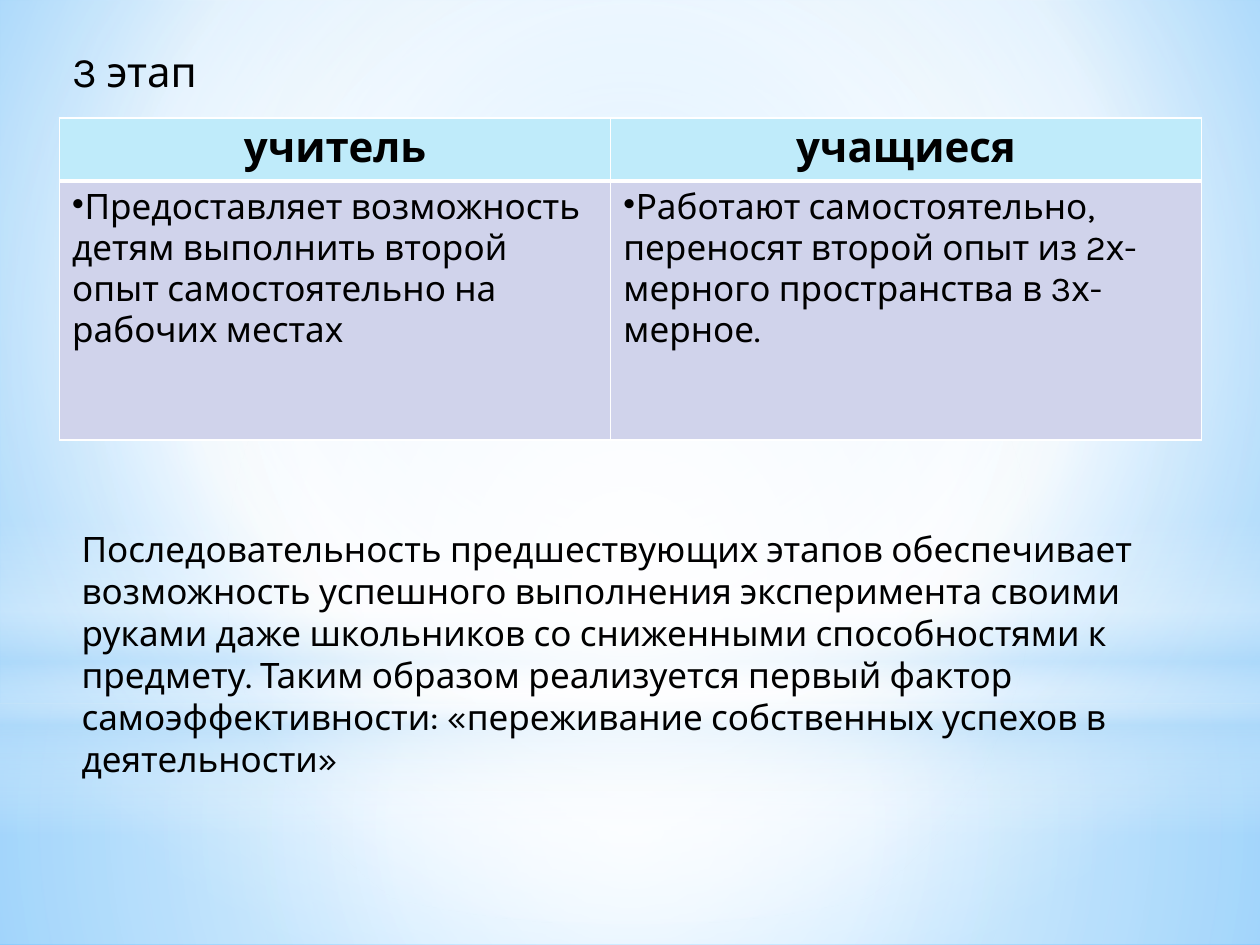
from lxml.etree import SubElement
from pptx import Presentation
from pptx.dml.color import RGBColor
from pptx.enum.shapes import MSO_SHAPE
from pptx.enum.text import MSO_ANCHOR, MSO_AUTO_SIZE, PP_ALIGN
from pptx.oxml import parse_xml
from pptx.oxml.ns import nsdecls, qn
from pptx.util import Pt

WIDTH, HEIGHT = 720, 540
CENTER = (50, 50, 50, 50)


def color(value):
    return RGBColor.from_string(value)


def gradient_xml(stops, focus=None, angle=0):
    """Radial gradient around the focus rectangle, or linear without one."""
    stop_xml = "".join(
        f'<a:gs pos="{position * 1000}"><a:srgbClr val="{value}">'
        f'<a:alpha val="{opacity * 1000}"/></a:srgbClr></a:gs>'
        for position, value, opacity in stops)
    if focus:
        sides = " ".join(f'{side}="{share * 1000}"' for side, share in zip("ltrb", focus))
        course = f'<a:path path="circle"><a:fillToRect {sides}/></a:path>'
    else:
        course = f'<a:lin ang="{angle * 60000}" scaled="0"/>'
    return parse_xml(f'<a:gradFill {nsdecls("a")} rotWithShape="1">'
                     f'<a:gsLst>{stop_xml}</a:gsLst>{course}</a:gradFill>')


class SlideBuilder:
    font = {"name": "Karla", "bold": False}
    text_color = "000000"
    border_color = "FFFFFF"

    def __init__(self, slide):
        self.slide = slide

    def apply_gradient(self, fill, properties_tag, owner, **gradient):
        fill.background()
        properties = next(owner.iter(qn(properties_tag)))
        properties.replace(properties.find(qn("a:noFill")), gradient_xml(**gradient))

    def background(self, **gradient):
        self.apply_gradient(self.slide.background.fill, "p:bgPr", self.slide.element, **gradient)

    def glow(self, kind, box, **gradient):
        shape = self.slide.shapes.add_shape(kind, *map(Pt, box))
        shape.shadow.inherit = False
        shape.line.fill.background()
        self.apply_gradient(shape.fill, "p:spPr", shape.element, **gradient)

    def fill_text(self, frame, text, size, align=PP_ALIGN.LEFT, **extra):
        paragraph = frame.paragraphs[0]
        paragraph.alignment = align
        run = paragraph.add_run()
        run.text = text
        for name, value in {**self.font, "size": Pt(size), **extra}.items():
            setattr(run.font, name, value)
        run.font.color.rgb = color(self.text_color)
        return paragraph

    def fit_frame(self, frame):
        settings = {"word_wrap": True, "vertical_anchor": MSO_ANCHOR.TOP,
                    "auto_size": MSO_AUTO_SIZE.SHAPE_TO_FIT_TEXT}
        for name, value in settings.items():
            setattr(frame, name, value)

    def title(self, text, box, size):
        shape = self.slide.shapes.title
        for name, value in zip(("left", "top", "width", "height"), box):
            setattr(shape, name, Pt(value))
        self.fit_frame(shape.text_frame)
        self.fill_text(shape.text_frame, text, size)
        shape.element.getparent().append(shape.element)  # in front of the glows

    def text(self, text, box, size):
        frame = self.slide.shapes.add_textbox(*map(Pt, box)).text_frame
        self.fit_frame(frame)
        self.fill_text(frame, text, size)

    def bullet(self, paragraph):
        properties = paragraph._p.get_or_add_pPr()
        properties.set("marL", "0")
        properties.set("indent", "0")
        SubElement(properties, qn("a:buChar"), char="•")

    def borders(self, cell, bottom):
        properties = cell._tc.get_or_add_tcPr()
        widths = {"lnL": 1, "lnR": 1, "lnT": 1, "lnB": bottom}
        for index, (tag, width) in enumerate(widths.items()):
            properties.insert(index, parse_xml(
                f'<a:{tag} {nsdecls("a")} w="{Pt(width)}"><a:solidFill>'
                f'<a:srgbClr val="{self.border_color}"/></a:solidFill></a:{tag}>'))

    def table(self, rows, position, widths, heights, fills):
        table = self.slide.shapes.add_table(
            len(rows), len(widths), *map(Pt, (*position, sum(widths), sum(heights)))).table
        for column, width in zip(table.columns, widths):
            column.width = Pt(width)
        for row_index, texts in enumerate(rows):
            table.rows[row_index].height = Pt(heights[row_index])
            is_header = row_index == 0
            for column_index, text in enumerate(texts):
                cell = table.cell(row_index, column_index)
                cell.fill.solid()
                cell.fill.fore_color.rgb = color(fills[row_index])
                self.borders(cell, bottom=3 if is_header else 1)
                if is_header:
                    self.fill_text(cell.text_frame, text, 24, PP_ALIGN.CENTER, bold=True)
                else:
                    self.bullet(self.fill_text(cell.text_frame, text, 20))


def main():
    presentation = Presentation()
    presentation.slide_width, presentation.slide_height = Pt(WIDTH), Pt(HEIGHT)
    title_only = presentation.slide_layouts[5]
    builder = SlideBuilder(presentation.slides.add_slide(title_only))

    # Sky backdrop
    horizon = 402
    builder.background(
        stops=[(0, "9ED5FF", 100), (60, "FFFFFF", 100), (100, "5BB9FF", 100)],
        focus=(20, 10, 20, 60))
    builder.glow(
        MSO_SHAPE.RECTANGLE, (0, horizon, WIDTH, HEIGHT - horizon), focus=CENTER,
        stops=[(0, "FFFFFF", 91), (37, "FFFFFF", 76), (100, "B4DCFA", 79)])
    builder.glow(
        MSO_SHAPE.RECTANGLE, (0, 0, WIDTH, horizon), focus=CENTER,
        stops=[(0, "FFFFFF", 89), (48, "FFFFFF", 62), (100, "B4DCFA", 79)])
    builder.glow(
        MSO_SHAPE.RECTANGLE, (0, 297, WIDTH, 180), angle=90,
        stops=[(0, "FFFFFF", 0), (29, "FFFFFF", 30), (45, "B4DCFA", 40),
               (55, "FFFFFF", 26), (65, "B4DCFA", 60), (100, "FFFFFF", 0)])
    builder.glow(
        MSO_SHAPE.OVAL, (0, 126, WIDTH, horizon), focus=CENTER,
        stops=[(0, "FFFFFF", 100), (56, "FFFFFF", 0)])

    # Stage title
    builder.title("3 этап", (34, 22.5, 208, 36), 24)

    # Roles of teacher and pupils
    builder.table(
        [("учитель", "учащиеся"),
         ("Предоставляет возможность детям выполнить второй опыт самостоятельно "
          "на рабочих местах",
          "Работают самостоятельно, переносят второй опыт из 2х-мерного "
          "пространства в 3х-мерное.")],
        position=(34, 67.5), widths=(315, 337.5), heights=(27, 148),
        fills=("BFEBFA", "D0D3EB"))

    # Conclusion
    builder.text(
        "Последовательность предшествующих этапов обеспечивает возможность успешного "
        "выполнения эксперимента своими руками даже школьников со сниженными "
        "способностями к предмету. Таким образом реализуется первый фактор "
        "самоэффективности: «переживание собственных успехов в деятельности»",
        (39.5, 298, 652.5, 128), 20)

    presentation.save("out.pptx")


if __name__ == "__main__":
    main()
